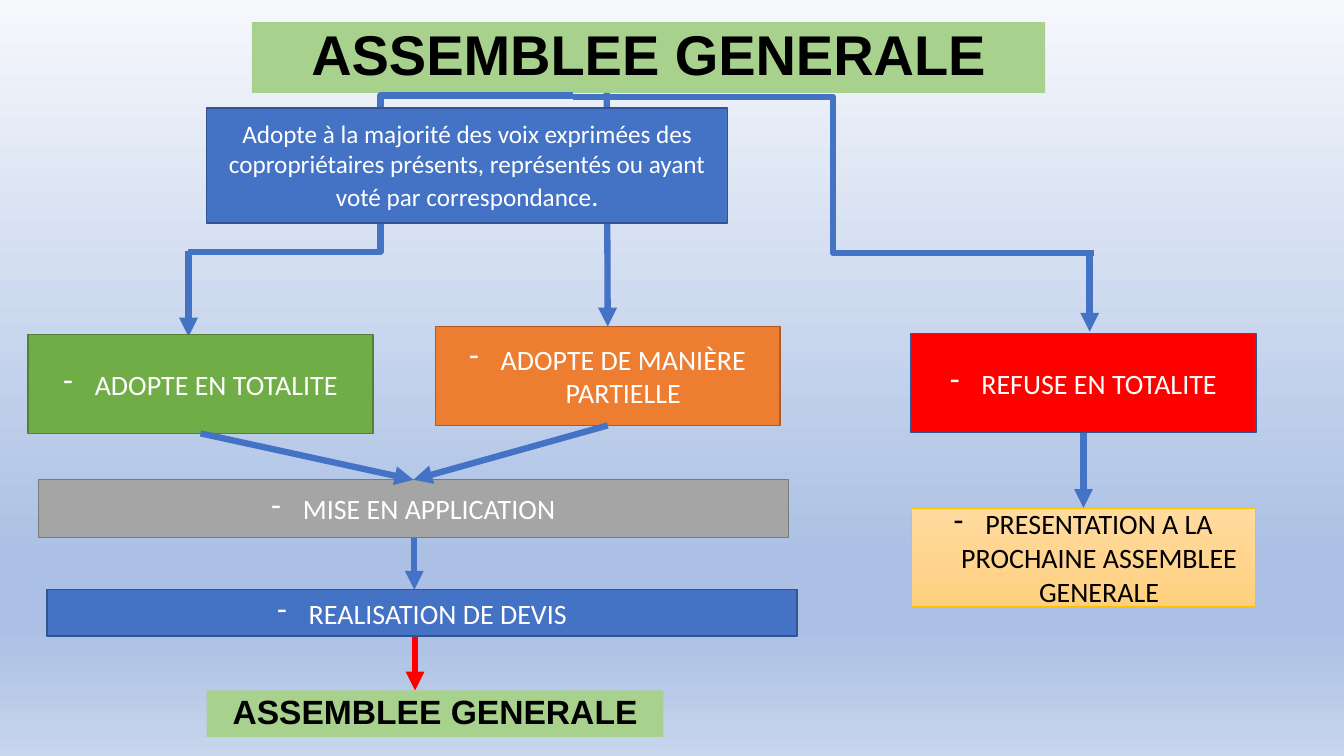
"""Build the flow chart of votes at a general assembly."""
from pptx import Presentation
from pptx.dml.color import RGBColor
from pptx.enum import shapes, text
from pptx.oxml import ns, xmlchemy
from pptx.util import Cm, Pt

BLUE, DARK, RED, GREEN = "4472C4", "325491", "FF0000", "A9D18E"
SKY = [(0, "F6F8FC"), (74, "ABC0E4"), (83, "ABC0E4"), (100, "C7D5ED")]
SAND = [(0, "FFDB9E"), (50, "FFD590"), (100, "FFD07C")]

HEAD = "ASSEMBLEE GENERALE"
VOTE = ("Adopte à la majorité des voix exprimées des copropriétaires "
        "présents, représentés ou ayant voté par correspondance")
SMALL, WIDE = (8.69, 2.49), 18.9

STEPS = {
    "full": ("ADOPTE EN TOTALITE", (0.71, 8.43, *SMALL), "70AD47", "538035", 1, "FFFFFF"),
    "part": ("ADOPTE DE MANIÈRE PARTIELLE", (10.97, 8.23, *SMALL), "ED7D31", "AF5C24", 1, "FFFFFF"),
    "none": ("REFUSE EN TOTALITE", (22.96, 8.41, *SMALL), RED, DARK, 1, "FFFFFF"),
    "apply": ("MISE EN APPLICATION", (0.97, 12.09, WIDE, 1.45), "A5A5A5", "7A7A7A", 1, "FFFFFF"),
    "next": ("PRESENTATION A LA PROCHAINE ASSEMBLEE GENERALE", (22.96, 12.8, *SMALL),
             SAND, "FFC000", 0.5, "000000"),
    "quote": ("REALISATION DE DEVIS", (1.19, 14.86, WIDE, 1.17), BLUE, DARK, 1, "FFFFFF"),
}
ELBOWS = [(14.43, 2.41, 4.75, 6.35), (14.43, 2.44, 27.56, 6.38)]
ARROWS = [
    ((10.44, 12.62, 10.44, 14.86), BLUE),
    ((4.75, 6.32, 4.75, 8.48), BLUE),
    ((27.46, 6.43, 27.46, 8.36), BLUE),
    ((10.46, 16.03, 10.46, 17.4), RED),
]
LINKS = [("full", "apply"), ("part", "apply"), ("none", "next")]
DROP = (15.29, 2.34, 15.29, 8.23)


def color(code):
    return RGBColor.from_string(code)


def shade(fill, root, stops):
    fill.gradient()
    fill.gradient_angle = 270
    group = root.find(".//" + ns.qn("a:gsLst"))
    for old in list(group):
        group.remove(old)
    for pos, code in stops:
        stop = xmlchemy.OxmlElement("a:gs")
        stop.set("pos", str(pos * 1000))
        tint = xmlchemy.OxmlElement("a:srgbClr")
        tint.set("val", code)
        stop.append(tint)
        group.append(stop)


def write(shape, words, size=20, font="Calibri", ink="FFFFFF", bold=False,
          space=None, dash=False, tail=None):
    frame = shape.text_frame
    frame.word_wrap = True
    frame.auto_size = text.MSO_AUTO_SIZE.NONE
    frame.vertical_anchor = text.MSO_ANCHOR.MIDDLE
    para = frame.paragraphs[0]
    para.alignment = text.PP_ALIGN.CENTER
    if space:
        para.line_spacing = space
    if dash:
        props = para._p.get_or_add_pPr()
        props.set("marL", str(Cm(0.79)))
        props.set("indent", str(-Cm(0.79)))
        props.append(xmlchemy.OxmlElement("a:buFontTx"))
        mark = xmlchemy.OxmlElement("a:buChar")
        mark.set("char", "-")
        props.append(mark)
    runs = [(words, size)] + ([tail] if tail else [])
    for part, points in runs:
        run = para.add_run()
        run.text = part
        run.font.size = Pt(points)
        run.font.name = font
        run.font.bold = bold
        run.font.color.rgb = color(ink)


def paint(shape, fill, edge=None, width=1):
    if isinstance(fill, str):
        shape.fill.solid()
        shape.fill.fore_color.rgb = color(fill)
    else:
        shade(shape.fill, shape._element, fill)
    if edge:
        shape.line.color.rgb = color(edge)
        shape.line.width = Pt(width)
    else:
        shape.line.fill.background()


def box(slide, place, fill, edge=None, width=1):
    shape = slide.shapes.add_shape(
        shapes.MSO_SHAPE.RECTANGLE, *(Cm(n) for n in place))
    shape.shadow.inherit = False
    paint(shape, fill, edge, width)
    return shape


def join(slide, ends, ink=BLUE, bent=False):
    kind = shapes.MSO_CONNECTOR.ELBOW if bent else shapes.MSO_CONNECTOR.STRAIGHT
    line = slide.shapes.add_connector(kind, *(Cm(n) for n in ends))
    line.line.color.rgb = color(ink)
    line.line.width = Pt(4.5)
    if not bent:
        tip = xmlchemy.OxmlElement("a:tailEnd")
        tip.set("type", "triangle")
        line.line._get_or_add_ln().append(tip)
    line._element.spPr.append(xmlchemy.OxmlElement("a:effectLst"))
    return line


def main():
    deck = Presentation()
    deck.slide_width, deck.slide_height = Cm(33.87), Cm(19.05)
    slide = deck.slides.add_slide(deck.slide_layouts[5])
    shade(slide.background.fill, slide._element, SKY)

    title = slide.shapes.title
    title.left, title.top, title.width, title.height = (
        Cm(n) for n in (6.35, 0.56, 19.99, 1.78))
    paint(title, GREEN)
    write(title, HEAD, size=40, font="Arial", ink="000000", bold=True, space=0.9)

    for ends in ELBOWS:
        join(slide, ends, bent=True)
    for ends, ink in ARROWS:
        join(slide, ends, ink)

    boxes = {}
    for name, (words, place, fill, edge, width, ink) in STEPS.items():
        boxes[name] = box(slide, place, fill, edge, width)
        write(boxes[name], words, ink=ink, dash=True)

    join(slide, DROP).end_connect(boxes["part"], 0)
    for start, end in LINKS:
        line = join(slide, (0, 0, 1, 1))
        line.begin_connect(boxes[start], 2)
        line.end_connect(boxes[end], 0)

    vote = box(slide, (5.21, 2.72, 13.13, 2.9), BLUE, DARK)
    write(vote, VOTE, size=18, tail=(".", 20))
    last = box(slide, (5.21, 17.4, 11.51, 1.17), GREEN)
    write(last, HEAD, size=24, font="Arial", ink="000000", bold=True, space=0.9)
    deck.save("out.pptx")


if __name__ == "__main__":
    main()
